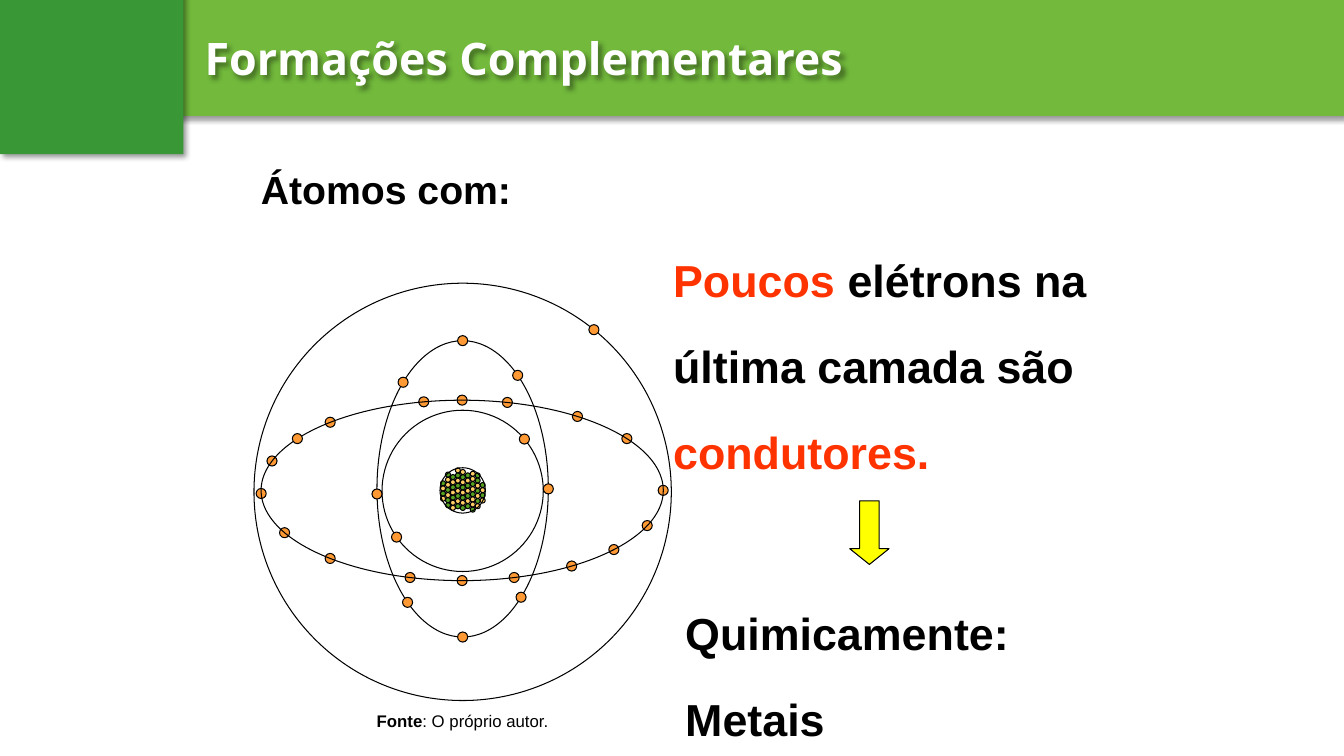
import math
from dataclasses import dataclass

import pptx
import pptx.dml.color
import pptx.enum.shapes
import pptx.enum.text
import pptx.oxml
import pptx.oxml.ns
import pptx.util

SHAPE = pptx.enum.shapes.MSO_SHAPE
ALIGN = pptx.enum.text.PP_ALIGN
COLORS = {
    "banner": "72B93C", "corner": "399736", "white": "FFFFFF", "black": "000000",
    "proton": "FFCC66", "neutron": "54A021", "electron": "FF9933",
    "highlight": "FF3300", "arrow": "FFFF00",
}
COLUMNS, ROWS = 160, 90
CELL = pptx.util.Emu(76200)
ELECTRON_SIZE = 1.2
NUCLEON_SIZE = 0.6
NUCLEON_STEP_X, NUCLEON_STEP_Y = 0.59, 0.61
NUCLEUS_LEFT = 52.44
NUCLEON_KINDS = {"P": "proton", "N": "neutron"}


@dataclass(frozen=True)
class Area:
    col: float
    row: float
    cols: float
    rows: float

    def box(self) -> tuple[int, ...]:
        return tuple(round(n * CELL) for n in (self.col, self.row, self.cols, self.rows))


@dataclass(frozen=True)
class Orbit:
    col: float
    row: float
    radius_x: float
    radius_y: float
    electrons_below: tuple[int, ...]
    electrons_above: tuple[int, ...]


@dataclass(frozen=True)
class NucleonColumn:
    top: float
    kinds: str


@dataclass(frozen=True)
class Span:
    text: str
    color: str = "black"
    bold: bool = True


@dataclass(frozen=True)
class TextBlock:
    area: Area
    paragraphs: tuple[tuple[Span, ...], ...]
    size: int
    spacing: float = 1.6
    align: ALIGN = ALIGN.LEFT
    inset_y: float = 0.6


NUCLEUS = [
    NucleonColumn(57.24, "NPNP"),
    NucleonColumn(56.2, "NPPNPNN"),
    NucleonColumn(56.5, "NPNPNPP"),
    NucleonColumn(55.7, "PNPNPNPN"),
    NucleonColumn(55.9, "PNPNPNPN"),
    NucleonColumn(56.3, "NPNPNPN"),
    NucleonColumn(56.1, "PPNPNPPN"),
    NucleonColumn(56.3, "NNPNPNP"),
    NucleonColumn(57.45, "NPNP"),
]

ORBITS = [
    Orbit(55.08, 58.38, 2.7, 2.7, (), ()),
    Orbit(55.08, 58.44, 9.6, 9.6, (), (145, 320)),
    Orbit(55.08, 58.2, 10.2, 17.64, (), (270, 90, 130, 47, 226, 310, 178, 0)),
    Orbit(55.02, 58.38, 23.94, 10.74,
          (229, 0, 178, 270, 90, 305, 57, 131, 152, 199, 325, 23, 75, 283, 259, 105, 41),
          (215,)),
    Orbit(55.08, 58.56, 24.84, 24.84, (), (309,)),
]

TEXTS = [
    TextBlock(Area(29.88, 15.72, 41.04, 6.84), ((Span("Átomos com:"),),), 28),
    TextBlock(Area(78.96, 25.68, 63.96, 28.32), ((
        Span("Poucos", "highlight"),
        Span(" elétrons na última camada são "),
        Span("condutores.", "highlight"),
    ),), 32),
    TextBlock(Area(80.4, 67.68, 46.44, 26.76),
              ((Span("Quimicamente:"),), (Span("Metais"),)), 32),
    TextBlock(Area(36.12, 83.4, 37.92, 4.8),
              ((Span("Fonte"), Span(": O próprio autor.", bold=False)),),
              12, 1.0, ALIGN.CENTER, 1.2),
]


def rgb(name: str) -> pptx.dml.color.RGBColor:
    return pptx.dml.color.RGBColor.from_string(COLORS[name])


def add_figure(shapes, kind: SHAPE, area: Area, fill: str | None = None, line: str | None = None):
    figure = shapes.add_shape(kind, *area.box())
    if fill:
        figure.fill.solid()
        figure.fill.fore_color.rgb = rgb(fill)
    else:
        figure.fill.background()
    if line:
        figure.line.color.rgb = rgb(line)
        figure.line.width = pptx.util.Pt(0.75)
    else:
        figure.line.fill.background()
    figure.shadow.inherit = False
    return figure


def cast_shadow(figure) -> None:
    figure.shadow.inherit = False
    effects = figure.element.spPr.find(pptx.oxml.ns.qn("a:effectLst"))
    effects.append(pptx.oxml.parse_xml(
        f'<a:outerShdw {pptx.oxml.ns.nsdecls("a")} blurRad="50800" dist="38100" '
        f'dir="2700000" algn="tl" rotWithShape="0"><a:srgbClr val="{COLORS["black"]}">'
        '<a:alpha val="40000"/></a:srgbClr></a:outerShdw>'))


def add_run(paragraph, text: str, *, size: int, color: str, bold: bool = True,
            font: str = "Arial") -> None:
    run = paragraph.add_run()
    run.text = text
    run.font.name = font
    run.font.size = pptx.util.Pt(size)
    run.font.bold = bold
    run.font.color.rgb = rgb(color)


def set_frame(frame, inset_y: float = 0.6) -> None:
    frame.word_wrap = True
    frame.auto_size = pptx.enum.text.MSO_AUTO_SIZE.NONE
    frame.vertical_anchor = pptx.enum.text.MSO_ANCHOR.TOP
    frame.margin_left = frame.margin_right = round(1.2 * CELL)
    frame.margin_top = frame.margin_bottom = round(inset_y * CELL)


def add_text(shapes, block: TextBlock) -> None:
    frame = shapes.add_textbox(*block.area.box()).text_frame
    set_frame(frame, block.inset_y)
    for index, spans in enumerate(block.paragraphs):
        paragraph = frame.add_paragraph() if index else frame.paragraphs[0]
        paragraph.alignment = block.align
        paragraph.line_spacing = block.spacing
        for span in spans:
            add_run(paragraph, span.text, size=block.size, color=span.color, bold=span.bold)


def add_header(slide) -> None:
    title = slide.shapes.title
    banner = add_figure(slide.shapes, SHAPE.RECTANGLE, Area(16.92, 0, 143.08, 13.8), "banner")
    cast_shadow(banner)
    title.element.addprevious(banner.element)
    title.left, title.top, title.width, title.height = Area(23.16, 3, 129.84, 7.68).box()
    set_frame(title.text_frame)
    heading = title.text_frame.paragraphs[0]
    heading.alignment = ALIGN.LEFT
    add_run(heading, "Formações Complementares", size=32, color="white", font="Open Sans")
    cast_shadow(title)
    corner = add_figure(slide.shapes, SHAPE.RECTANGLE, Area(0, -0.96, 21.84, 19.32), "corner")
    cast_shadow(corner)


def add_electrons(shapes, orbit: Orbit, angles: tuple[int, ...]) -> None:
    for angle in map(math.radians, angles):
        col = orbit.col + orbit.radius_x * math.cos(angle) - ELECTRON_SIZE / 2
        row = orbit.row + orbit.radius_y * math.sin(angle) - ELECTRON_SIZE / 2
        add_figure(shapes, SHAPE.OVAL, Area(col, row, ELECTRON_SIZE, ELECTRON_SIZE),
                   "electron", "black")


def add_atom(shapes) -> None:
    for index, column in enumerate(NUCLEUS):
        for place, kind in enumerate(column.kinds):
            area = Area(NUCLEUS_LEFT + index * NUCLEON_STEP_X,
                        column.top + place * NUCLEON_STEP_Y, NUCLEON_SIZE, NUCLEON_SIZE)
            add_figure(shapes, SHAPE.OVAL, area, NUCLEON_KINDS[kind], "black")
    for orbit in ORBITS:
        add_electrons(shapes, orbit, orbit.electrons_below)
        ring = Area(orbit.col - orbit.radius_x, orbit.row - orbit.radius_y,
                    2 * orbit.radius_x, 2 * orbit.radius_y)
        add_figure(shapes, SHAPE.OVAL, ring, line="black")
        add_electrons(shapes, orbit, orbit.electrons_above)


def main() -> None:
    deck = pptx.Presentation()
    deck.slide_width, deck.slide_height = COLUMNS * CELL, ROWS * CELL
    slide = deck.slides.add_slide(deck.slide_layouts.get_by_name("Title Only"))
    add_header(slide)
    add_atom(slide.shapes.add_group_shape().shapes)
    for block in TEXTS:
        add_text(slide.shapes, block)
    arrow = add_figure(slide.shapes, SHAPE.DOWN_ARROW, Area(101.16, 59.64, 4.68, 7.56),
                       "arrow", "black")
    arrow.adjustments[0], arrow.adjustments[1] = 0.5, 0.4
    deck.save("out.pptx")


if __name__ == "__main__":
    main()
